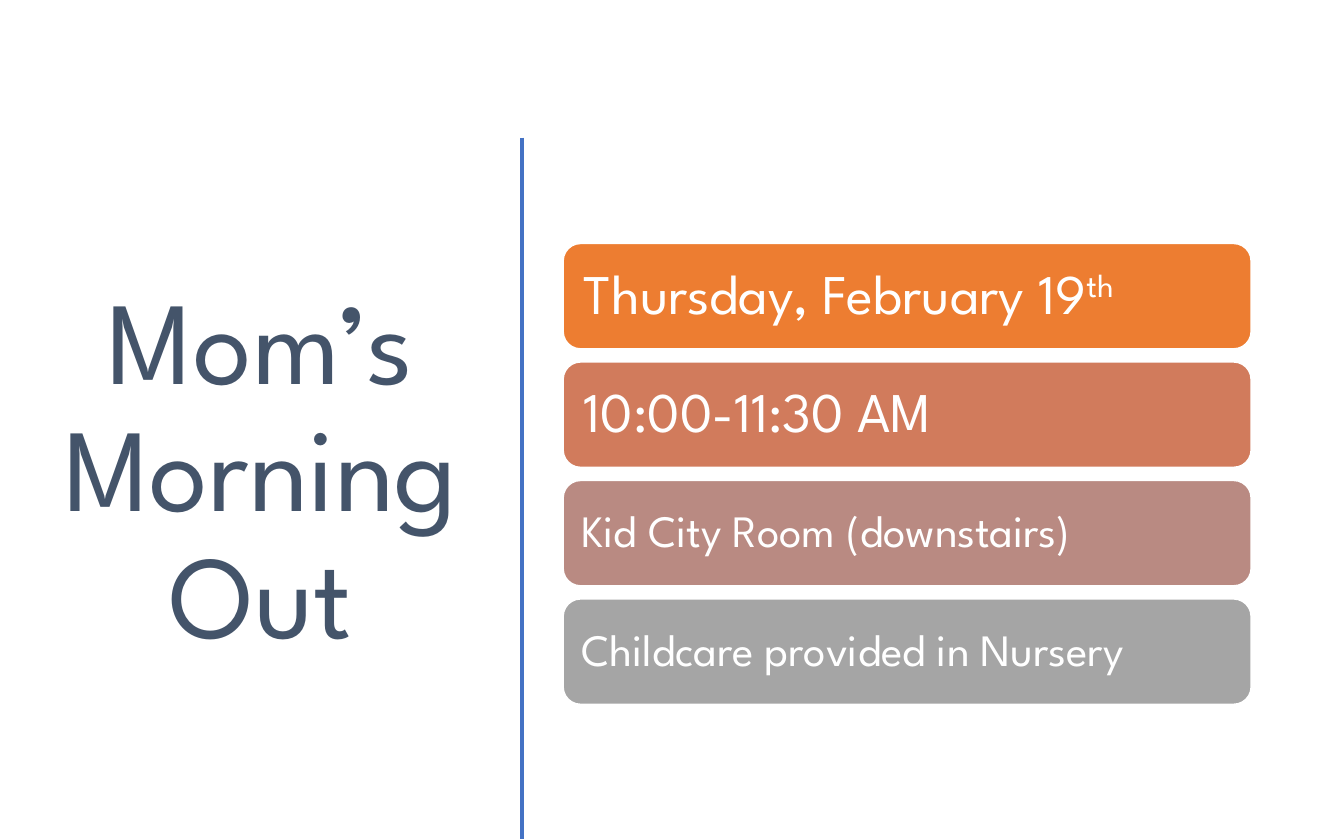
from pptx import Presentation
from pptx.dml.color import RGBColor
from pptx.enum.shapes import MSO_CONNECTOR, MSO_SHAPE
from pptx.enum.text import MSO_ANCHOR, PP_ALIGN
from pptx.oxml.ns import qn
from pptx.util import Cm, Pt
from lxml import etree

STRAIGHT = MSO_CONNECTOR.STRAIGHT
ROUNDED = MSO_SHAPE.ROUNDED_RECTANGLE
MIDDLE = MSO_ANCHOR.MIDDLE
LEFT, CENTER = PP_ALIGN.LEFT, PP_ALIGN.CENTER

FONT = "League Spartan"
COLORS = {
    "title": "44546A",
    "divider": "4472C4",
    "white": "FFFFFF",
    "date": "ED7D31",
    "time": "D17B5C",
    "place": "B98A82",
    "childcare": "A5A5A5",
}

# Detail cards: colour, text size, inset in cm, runs of (text, superscript)
DETAILS = [
    ("date", 30, 0.3, [("Thursday, February 19", False), ("th", True)]),
    ("time", 30, 0.3, [("10:00-11:30 AM", False)]),
    ("place", 24, 0.25, [("Kid City Room (downstairs)", False)]),
    ("childcare", 24, 0.25, [("Childcare provided in Nursery", False)]),
]
CARD_LEFT, CARD_TOP = 10.64, 4.6
CARD_WIDTH, CARD_HEIGHT = 13.01, 2.0
CARD_PITCH = 2.24
DIVIDER_X = 9.86


def color(name):
    return RGBColor.from_string(COLORS[name])


def write_text(shape, runs, size, color_name, alignment):
    frame = shape.text_frame
    frame.word_wrap = True
    frame.vertical_anchor = MIDDLE
    paragraph = frame.paragraphs[0]
    paragraph.alignment = alignment
    paragraph.line_spacing = 0.9
    for text, superscript in runs:
        run = paragraph.add_run()
        run.text = text
        run.font.name = FONT
        run.font.size = Pt(size)
        run.font.color.rgb = color(color_name)
        if superscript:
            run._r.get_or_add_rPr().set("baseline", "30000")


def add_title(slide, text):
    box = slide.shapes.add_textbox(Cm(0), Cm(2.49), Cm(DIVIDER_X), Cm(12.93))
    write_text(box, [(text, False)], 63, "title", CENTER)


def add_divider(slide):
    line = slide.shapes.add_connector(
        STRAIGHT, Cm(DIVIDER_X), Cm(2.6), Cm(DIVIDER_X), Cm(15.86))
    line.line.color.rgb = color("divider")
    line.line.width = Pt(2)
    etree.SubElement(line._element.spPr, qn("a:effectLst"))


def add_card(slide, top, fill, size, inset, runs):
    card = slide.shapes.add_shape(
        ROUNDED, Cm(CARD_LEFT), Cm(top), Cm(CARD_WIDTH), Cm(CARD_HEIGHT))
    card.shadow.inherit = False
    card.fill.solid()
    card.fill.fore_color.rgb = color(fill)
    card.line.color.rgb = color("white")
    card.line.width = Pt(1)
    frame = card.text_frame
    frame.margin_left = frame.margin_right = Cm(inset)
    frame.margin_top = frame.margin_bottom = Cm(inset)
    write_text(card, runs, size, "white", LEFT)


def main():
    presentation = Presentation()
    presentation.slide_width = Cm(25.4)
    presentation.slide_height = Cm(15.88)
    slide = presentation.slides.add_slide(presentation.slide_layouts[6])

    # Title on the left, divider beside it
    add_title(slide, "Mom’s Morning Out")
    add_divider(slide)

    # Event details stacked on the right
    for index, detail in enumerate(DETAILS):
        add_card(slide, CARD_TOP + index * CARD_PITCH, *detail)

    presentation.save("out.pptx")


if __name__ == "__main__":
    main()
